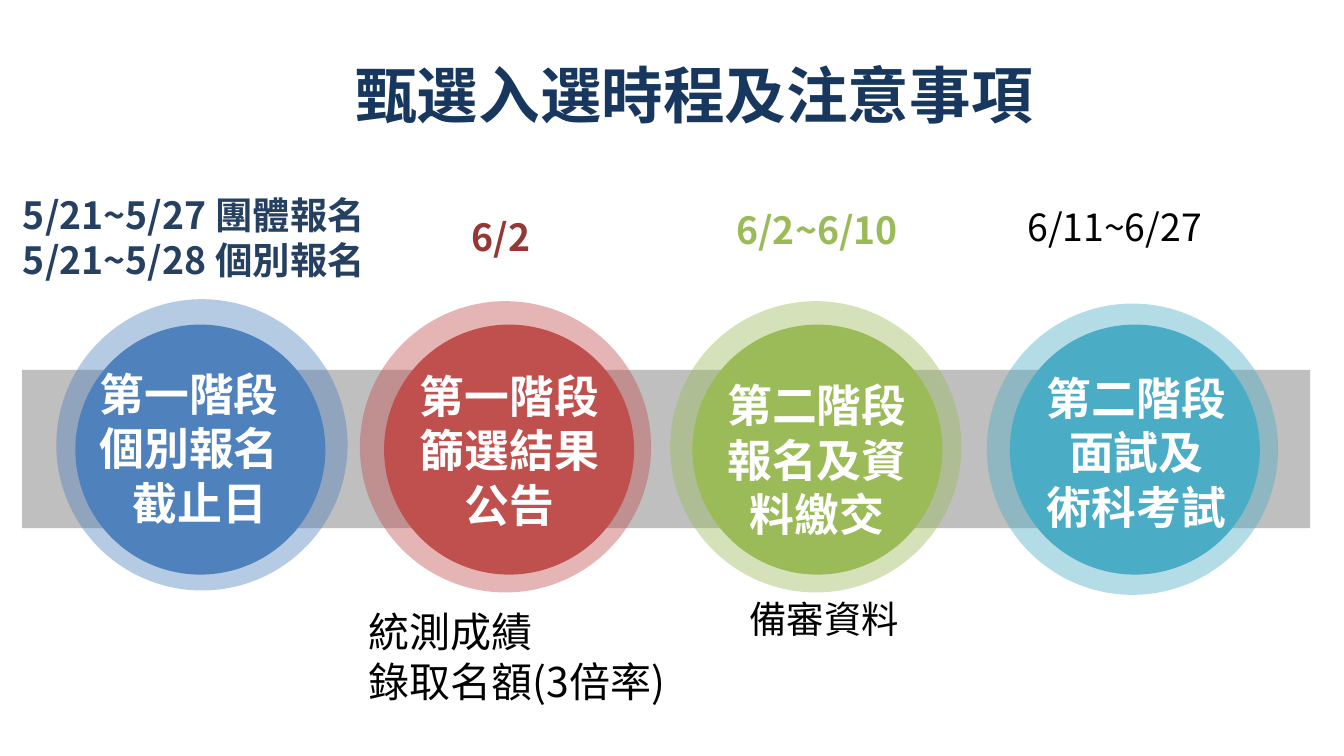
from lxml import etree
from pptx import Presentation
from pptx.dml.color import RGBColor
from pptx.enum.shapes import MSO_SHAPE
from pptx.enum.text import MSO_ANCHOR, PP_ALIGN
from pptx.oxml.ns import qn
from pptx.util import Cm, Pt

LEFT, CENTER = PP_ALIGN.LEFT, PP_ALIGN.CENTER
TOP, MIDDLE = MSO_ANCHOR.TOP, MSO_ANCHOR.MIDDLE
RECT, OVAL, DONUT = MSO_SHAPE.RECTANGLE, MSO_SHAPE.OVAL, MSO_SHAPE.DONUT

CJK = "Noto Sans CJK SC"
LINE_HEIGHT = 1.22
RING, DISC = 7.34, 6.3
LABEL_W, LABEL_H = 5.56, 4.37
COLORS = {
    "title": "17375E", "bar": "BFBFBF", "white": "FFFFFF", "black": "000000",
    "blue": "4F81BD", "red": "C0504D", "green": "9BBB59", "aqua": "4BACC6",
    "navy": "254061", "maroon": "953735",
}

# Offsets (dx, dy) and boxes (dx, dy, w, h) are in cm from the ring's corner.
STAGES = [
    {"ring": (1.42, 7.54), "color": "blue", "disc": (0.48, 0.64),
     "label": (0.84, 1.55),
     "lines": [("第一階段個別報名", LEFT), ("截止日", CENTER)],
     "date": [("5/21~5/27 團體報名", LEFT), ("5/21~5/28 個別報名", LEFT)],
     "date_box": (-1.09, -3.5, 9.6, 3.84), "date_color": "navy"},
    {"ring": (9.07, 7.59), "color": "red", "disc": (0.61, 0.59),
     "label": (0.99, 1.55), "lines": [("第一階段篩選結果公告", CENTER)],
     "date": [("6/2", CENTER)],
     "date_box": (0.89, -2.41, 5.33, 1.52), "date_color": "maroon",
     "note": [("統測成績", LEFT), ("錄取名額(3倍率)", LEFT)],
     "note_box": (-0.03, 7.55, 8.84, 2.77), "note_size": 29.3},
    {"ring": (16.89, 7.59), "color": "green", "disc": (0.56, 0.59),
     "label": (0.92, 1.78), "lines": [("第二階段報名及資料繳交", CENTER)],
     "date": [("6/2~6/10", CENTER)],
     "date_box": (1.04, -3.98, 5.33, 4.32), "date_color": "green",
     "note": [("備審資料", CENTER)],
     "note_box": (0.33, 7.29, 7.11, 1.4), "note_size": 26.7},
    {"ring": (24.87, 7.65), "color": "aqua", "disc": (0.58, 0.53),
     "label": (0.99, 1.54),
     "lines": [("第二階段面試及", CENTER), ("術科考試", CENTER)],
     "date": [("6/11~6/27", CENTER)],
     "date_box": (0, -4.12, 6.45, 4.32), "date_color": "black"},
]


def add_shape(slide, kind, box, color, alpha=None):
    sp = slide.shapes.add_shape(kind, *map(Cm, box))
    sp.shadow.inherit = False
    sp.fill.solid()
    sp.fill.fore_color.rgb = RGBColor.from_string(COLORS[color])
    sp.line.fill.background()
    if alpha is not None:
        clr = sp.fill._xPr.find(".//" + qn("a:srgbClr"))
        etree.SubElement(clr, qn("a:alpha")).set("val", str(alpha * 1000))
    return sp


def add_text(slide, box, lines, size, color, bold=False, anchor=TOP, font=CJK):
    tf = slide.shapes.add_textbox(*map(Cm, box)).text_frame
    tf.word_wrap = True
    tf.vertical_anchor = anchor
    for i, (text, align) in enumerate(lines):
        p = tf.paragraphs[0] if i == 0 else tf.add_paragraph()
        p.alignment = align
        p.line_spacing = Pt(size * LINE_HEIGHT)
        p.font.size = Pt(size)
        p.font.bold = bold
        p.font.name = font
        p.font.color.rgb = RGBColor.from_string(COLORS[color])
        r = p.add_run()
        r.text = text
        # East Asian typeface for the Chinese glyphs
        etree.SubElement(r._r.get_or_add_rPr(), qn("a:ea")).set("typeface", CJK)


def add_header(slide, box):
    add_text(slide, box, [("甄選入選時程及注意事項", CENTER)], 44, "title",
             bold=True, anchor=MIDDLE, font="Calibri")


def add_stage(slide, stage):
    x, y = stage["ring"]

    def place(dx, dy, w, h):
        return x + dx, y + dy, w, h

    # Ring and disc
    ring = add_shape(slide, DONUT, (x, y, RING, RING), stage["color"], alpha=42)
    ring.adjustments[0] = 0.158
    add_shape(slide, OVAL, place(*stage["disc"], DISC, DISC), stage["color"])

    # Stage name, date above, note below
    add_text(slide, place(*stage["label"], LABEL_W, LABEL_H), stage["lines"],
             32, "white", bold=True)
    add_text(slide, place(*stage["date_box"]), stage["date"], 26.7,
             stage["date_color"], bold=stage["date_color"] != "black",
             anchor=MIDDLE)
    if "note" in stage:
        add_text(slide, place(*stage["note_box"]), stage["note"],
                 stage["note_size"], "black")


def main():
    prs = Presentation()
    prs.slide_width, prs.slide_height = Cm(33.87), Cm(19.05)
    s = prs.slides.add_slide(prs.slide_layouts[6])
    add_shape(s, RECT, (0.56, 9.32, 32.46, 3.99), "bar")
    add_header(s, (2.26, 0.76, 30.48, 3.18))
    for stage in STAGES:
        add_stage(s, stage)
    prs.save("out.pptx")


if __name__ == "__main__":
    main()
